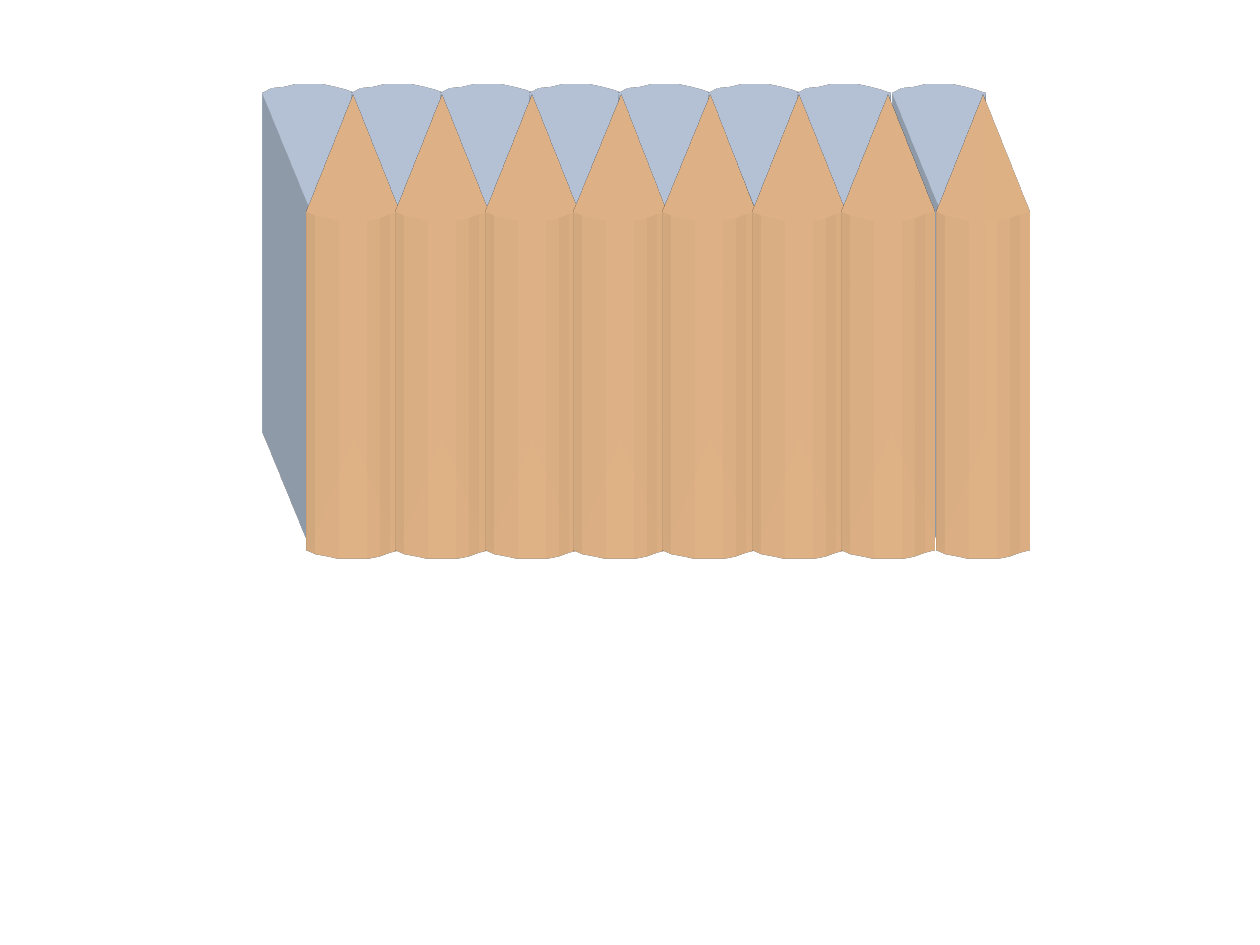
import dataclasses
import lxml.etree
import pptx
import pptx.dml.color
import pptx.oxml.ns
import pptx.util


@dataclasses.dataclass(frozen=True)
class Theme:
    """Hold the colours of the two rows of fans."""
    blue: str = "CFDEF3"
    tan: str = "FFCC99"


class Board:
    """Draw solid outlines on a slide split into 1000 columns and 750 rows."""

    def __init__(self, deck, theme):
        """Add a blank slide and fix the size of one grid cell."""
        self.theme = theme
        self.cell = deck.slide_width / 1000
        self.slide = deck.slides.add_slide(deck.slide_layouts[6])

    def group(self):
        """Add an empty group and return its shapes."""
        return self.slide.shapes.add_group_shape().shapes

    def fan(self, group, dots, fill):
        """Draw one fan through grid points and make it solid."""
        pen = group.build_freeform(*dots[0], scale=self.cell)
        pen.add_line_segments(dots[1:], close=True)
        form = pen.convert_to_shape()
        form.shadow.inherit = False
        form.fill.solid()
        form.fill.fore_color.rgb = pptx.dml.color.RGBColor.from_string(fill)
        form.line.fill.background()
        self.solid(form, fill)

    def solid(self, form, fill):
        """Extrude a shape straight down by the common depth."""
        props = form._element.spPr
        scene = node(props, "scene3d")
        node(scene, "camera", prst="legacyObliqueBottom")
        node(scene, "lightRig", rig="legacyFlat3", dir="r")
        depth = int(DEPTH * 2 * self.cell)
        body = node(props, "sp3d", extrusionH=str(depth),
                    prstMaterial="legacyMatte")
        node(node(body, "extrusionClr"), "srgbClr", val=fill)


def node(parent, name, **attrs):
    """Append a drawing element with attributes and return it."""
    tag = pptx.oxml.ns.qn("a:" + name)
    return lxml.etree.SubElement(parent, tag, attrs)


DEPTH = 268
STEPS = [0, 7, 17, 26, 37, 48, 58, 66, 74]
BACK = [74, 70, 69, 67, 67, 67, 69, 71, 74]
FRONT = [168, 171, 173, 175, 175, 175, 173, 170, 168]
STARTS = [208 + 70.8 * i for i in range(7)] + [708]
SHIFT = 35


def main():
    """Build the slide and save it."""
    deck = pptx.Presentation()
    deck.slide_width = pptx.util.Inches(10)
    deck.slide_height = pptx.util.Inches(7.5)
    theme = Theme()
    board = Board(deck, theme)
    rows = [(0, 167, BACK, theme.blue), (SHIFT, 75, FRONT, theme.tan)]

    for shift, tip, edge, fill in rows:
        group = board.group()
        for start in STARTS:
            left = start + shift
            dots = [(left + step, row) for step, row in zip(STEPS, edge)]
            board.fan(group, [(left + 37.5, tip)] + dots, fill)

    deck.save("out.pptx")


if __name__ == "__main__":
    main()
